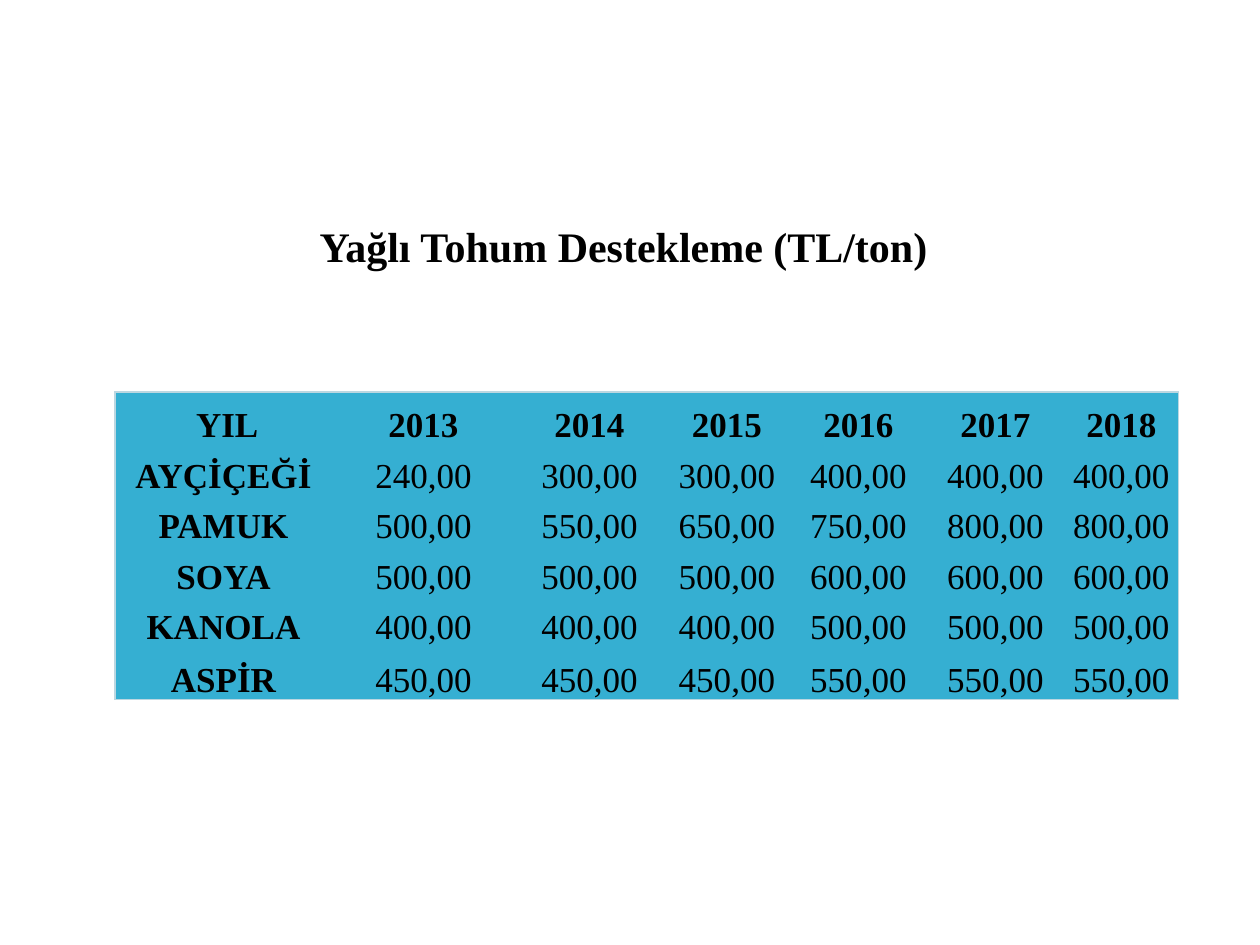
from lxml.etree import SubElement
from pptx import Presentation
from pptx.dml.color import RGBColor
from pptx.enum.text import MSO_ANCHOR as Anchor, MSO_AUTO_SIZE as AutoSize, PP_ALIGN as Align
from pptx.oxml.ns import qn
from pptx.util import Emu, Pt

# Content
TITLE = "Yağlı Tohum Destekleme (TL/ton)"
SUPPORT_RATES = [
    (" YIL", "2013", "2014", "2015", "2016", "2017", "2018"),
    ("AYÇİÇEĞİ", "240,00", "300,00", "300,00", "400,00", "400,00", "400,00"),
    ("PAMUK", "500,00", "550,00", "650,00", "750,00", "800,00", "800,00"),
    ("SOYA", "500,00", "500,00", "500,00", "600,00", "600,00", "600,00"),
    ("KANOLA", "400,00", "400,00", "400,00", "500,00", "500,00", "500,00"),
    ("ASPİR", "450,00", "450,00", "450,00", "550,00", "550,00", "550,00"),
]

# Layout in px, 126 to the inch
COLUMN_WIDTHS = (217, 183, 149, 126, 137, 137, 115)
ROW_HEIGHTS = (53, 51, 50, 51, 50, 53)
FONT = "Times New Roman"
TEXT, FILL, BORDER = "000000", "35AFD2", "BCD7E1"


def px(length):
    return Emu(round(length * 914400 / 126))


def rgb(value):
    return RGBColor.from_string(value)


def add_run(paragraph, text, size, bold):
    run = paragraph.add_run()
    run.text = text
    font = run.font
    font.name, font.size, font.bold = FONT, Pt(size), bold
    font.color.rgb = rgb(TEXT)


def set_borders(cell, outer_sides):
    """Draw the outer sides and leave the inner ones empty."""
    properties = cell._tc.get_or_add_tcPr()
    for side in "LRTB":
        line = SubElement(properties, qn(f"a:ln{side}"), w=str(Pt(0.75)))
        if side in outer_sides:
            solid = SubElement(line, qn("a:solidFill"))
            SubElement(solid, qn("a:srgbClr"), val=BORDER)
        else:
            SubElement(line, qn("a:noFill"))


presentation = Presentation()
presentation.slide_width, presentation.slide_height = px(1260), px(945)
slide = presentation.slides.add_slide(presentation.slide_layouts[5])

# Title
title = slide.shapes.title
title.left, title.top, title.width, title.height = px(307), px(214), px(639), px(63)
title_frame = title.text_frame
title_frame.word_wrap = False
title_frame.auto_size = AutoSize.SHAPE_TO_FIT_TEXT
title_frame.vertical_anchor = Anchor.TOP
heading = title_frame.paragraphs[0]
heading.alignment = Align.JUSTIFY
add_run(heading, TITLE, 24, True)

# Support table
last_row, last_column = len(ROW_HEIGHTS) - 1, len(COLUMN_WIDTHS) - 1
rates = slide.shapes.add_table(
    len(ROW_HEIGHTS), len(COLUMN_WIDTHS), px(115), px(392),
    px(sum(COLUMN_WIDTHS)), px(sum(ROW_HEIGHTS))).table
for column, width in zip(rates.columns, COLUMN_WIDTHS):
    column.width = px(width)
for row, height in zip(rates.rows, ROW_HEIGHTS):
    row.height = px(height)

for r, values in enumerate(SUPPORT_RATES):
    for c, value in enumerate(values):
        cell = rates.cell(r, c)
        edges = {"L": c == 0, "R": c == last_column, "T": r == 0, "B": r == last_row}
        set_borders(cell, [side for side, outer in edges.items() if outer])
        cell.fill.solid()
        cell.fill.fore_color.rgb = rgb(FILL)
        cell.vertical_anchor = Anchor.BOTTOM
        cell.margin_left = cell.margin_right = cell.margin_top = px(1)
        cell.margin_bottom = 0
        paragraph = cell.text_frame.paragraphs[0]
        paragraph.alignment = Align.CENTER
        add_run(paragraph, value, 20, r == 0 or c == 0)

presentation.save("out.pptx")
